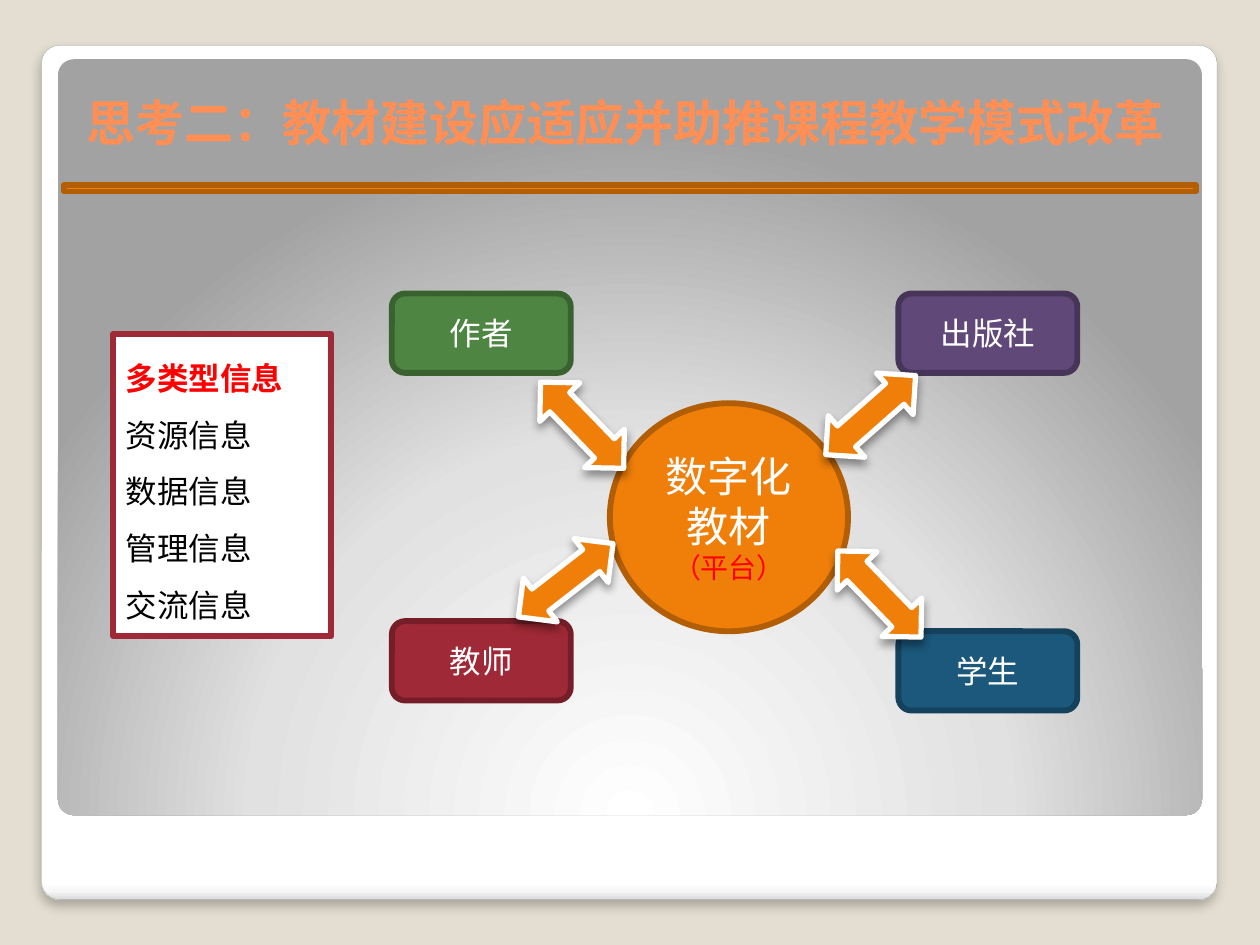
from lxml import etree
from pptx import Presentation
from pptx.dml.color import RGBColor
from pptx.enum.shapes import MSO_SHAPE
from pptx.enum.text import MSO_ANCHOR, PP_ALIGN
from pptx.oxml import parse_xml
from pptx.oxml.ns import nsdecls, qn
from pptx.util import Inches, Pt

FONT = "DejaVu Sans"
WHITE = RGBColor(0xFF, 0xFF, 0xFF)
BLACK = RGBColor(0x00, 0x00, 0x00)
RED = RGBColor(0xFF, 0x00, 0x00)
BEIGE = RGBColor(0xE3, 0xDE, 0xD1)
GRAY = RGBColor(0xA4, 0xA4, 0xA4)
PEACH = RGBColor(0xFF, 0x8F, 0x55)
ORANGE = RGBColor(0xF0, 0x7F, 0x09)
DARK_ORANGE = RGBColor(0xB2, 0x5E, 0x07)
GREEN = RGBColor(0x4E, 0x85, 0x42)
DARK_GREEN = RGBColor(0x3A, 0x62, 0x31)
PURPLE = RGBColor(0x60, 0x48, 0x78)
DARK_PURPLE = RGBColor(0x47, 0x35, 0x59)
CRIMSON = RGBColor(0x9F, 0x29, 0x36)
DARK_CRIMSON = RGBColor(0x76, 0x1E, 0x28)
BLUE = RGBColor(0x1B, 0x58, 0x7C)
DARK_BLUE = RGBColor(0x14, 0x41, 0x5C)

BORDER = 3.35
CARD_STOPS = [(0, "FFFFFF"), (98, "FFFFFF"), (99, "F7F7F7"), (100, "DADADA")]
PANEL_STOPS = [(0, "FFFFFF"), (55, "E1E1E1"), (100, "A2A2A2")]
LINEAR = '<a:lin ang="5400000" scaled="0"/>'
RADIAL = ('<a:path path="circle"><a:fillToRect l="50000" t="175000" '
          'r="50000" b="-75000"/></a:path>')


def add_box(s, kind, box, fill=None, line=None, width=BORDER):
    sp = s.shapes.add_shape(kind, *(Inches(v) for v in box))
    sp.shadow.inherit = False
    if fill is not None:
        sp.fill.solid()
        sp.fill.fore_color.rgb = fill
    if line is None:
        sp.line.fill.background()
    else:
        sp.line.color.rgb = line
        sp.line.width = Pt(width)
    return sp


def set_gradient(sp, stops, direction):
    sp.fill.background()
    stop_xml = "".join(
        f'<a:gs pos="{pos * 1000}"><a:srgbClr val="{color}"/></a:gs>'
        for pos, color in stops)
    grad = parse_xml(f'<a:gradFill {nsdecls("a")} rotWithShape="1">'
                     f'<a:gsLst>{stop_xml}</a:gsLst>{direction}</a:gradFill>')
    no_fill = sp._element.spPr.find(qn("a:noFill"))
    no_fill.getparent().replace(no_fill, grad)


def set_shadow(sp, alpha, blur, dist):
    effects = sp._element.spPr.find(qn("a:effectLst"))
    shadow = etree.SubElement(
        effects, qn("a:outerShdw"), blurRad=str(Pt(blur)), dist=str(Pt(dist)),
        dir="5400000", algn="ctr", rotWithShape="0")
    color = etree.SubElement(shadow, qn("a:srgbClr"), val="000000")
    etree.SubElement(color, qn("a:alpha"), val=str(alpha * 1000))


def write_lines(tf, lines, align=PP_ALIGN.CENTER, spacing=None):
    """Each line is (text, size, color, bold)."""
    tf.word_wrap = True
    tf.text = "\n".join(line[0] for line in lines)
    for p, (_, size, color, bold) in zip(tf.paragraphs, lines):
        p.alignment = align
        p.line_spacing = spacing
        font = p.runs[0].font
        font.name, font.size, font.bold = FONT, Pt(size), bold
        font.color.rgb = color
        etree.SubElement(font._element, qn("a:ea"), typeface=FONT)


def add_backdrop(s, card, panel):
    s.background.fill.solid()
    s.background.fill.fore_color.rgb = BEIGE
    for box, line, stops, direction in [(card, GRAY, CARD_STOPS, LINEAR),
                                        (panel, None, PANEL_STOPS, RADIAL)]:
        sp = add_box(s, MSO_SHAPE.ROUNDED_RECTANGLE, box, line=line, width=0.16)
        sp.adjustments[0] = 0.021
        set_gradient(sp, stops, direction)
        if box == card:
            set_shadow(sp, alpha=25, blur=6, dist=4)


def add_title(s, box):
    left, top, width, height = box
    title = s.shapes.add_textbox(*(Inches(v) for v in box))
    tf = title.text_frame
    tf.vertical_anchor = MSO_ANCHOR.MIDDLE
    write_lines(tf, [("思考二：教材建设应适应并助推课程教学模式改革", 28, PEACH, True)])
    # Rule below the title
    add_box(s, MSO_SHAPE.RECTANGLE, (0.51, top + height + 0.1, 8.98, 0.05),
            ORANGE, DARK_ORANGE)


def add_platform_diagram(s, box):
    left, top, width, height = box
    # Central platform
    hub = add_box(s, MSO_SHAPE.OVAL, (left + 1.73, top + 0.87, 1.89, 1.81),
                  ORANGE, DARK_ORANGE)
    hub.text_frame.vertical_anchor = MSO_ANCHOR.MIDDLE
    write_lines(hub.text_frame, [("数字化", 24, WHITE, False),
                                 ("教材", 24, WHITE, False),
                                 ("（平台）", 16, RED, False)])
    # Participants in the corners
    card_w, card_h = 1.42, 0.63
    right, bottom = left + width - card_w, top + height - card_h
    for text, x, y, fill, line in [
            ("作者", left, top, GREEN, DARK_GREEN),
            ("出版社", right, top, PURPLE, DARK_PURPLE),
            ("教师", left, bottom - 0.08, CRIMSON, DARK_CRIMSON),
            ("学生", right, bottom, BLUE, DARK_BLUE)]:
        sp = add_box(s, MSO_SHAPE.ROUNDED_RECTANGLE, (x, y, card_w, card_h),
                     fill, line)
        sp.text_frame.vertical_anchor = MSO_ANCHOR.MIDDLE
        write_lines(sp.text_frame, [(text, 18, WHITE, False)])
    # Two-way arrows between the platform and the participants
    for dx, dy, angle in [(1.29, 0.57, 316), (3.58, 0.49, 48.6),
                          (1.16, 1.8, 232.2), (3.65, 1.91, 316)]:
        arrow = add_box(s, MSO_SHAPE.UP_DOWN_ARROW,
                        (left + dx, top + dy, 0.44, 0.95), ORANGE, WHITE, 3)
        arrow.rotation = angle
        set_shadow(arrow, alpha=40, blur=5.2, dist=3)


def add_info_list(s, box):
    sp = add_box(s, MSO_SHAPE.RECTANGLE, box, WHITE, CRIMSON)
    sp.text_frame.vertical_anchor = MSO_ANCHOR.TOP
    items = ["资源信息", "数据信息", "管理信息", "交流信息"]
    write_lines(sp.text_frame,
                [("多类型信息", 18, RED, True)]
                + [(item, 18, BLACK, False) for item in items],
                PP_ALIGN.LEFT, 1.5)


def main():
    prs = Presentation()
    prs.slide_width, prs.slide_height = Inches(10), Inches(7.5)
    s = prs.slides.add_slide(prs.slide_layouts[6])
    add_backdrop(s, (0.33, 0.36, 9.33, 6.78), (0.46, 0.47, 9.08, 6))
    add_platform_diagram(s, (3.11, 2.33, 5.44, 3.31))
    add_info_list(s, (0.9, 2.65, 1.73, 2.4))
    add_title(s, (0.46, 0.57, 9, 0.8))
    prs.save("out.pptx")


if __name__ == "__main__":
    main()
